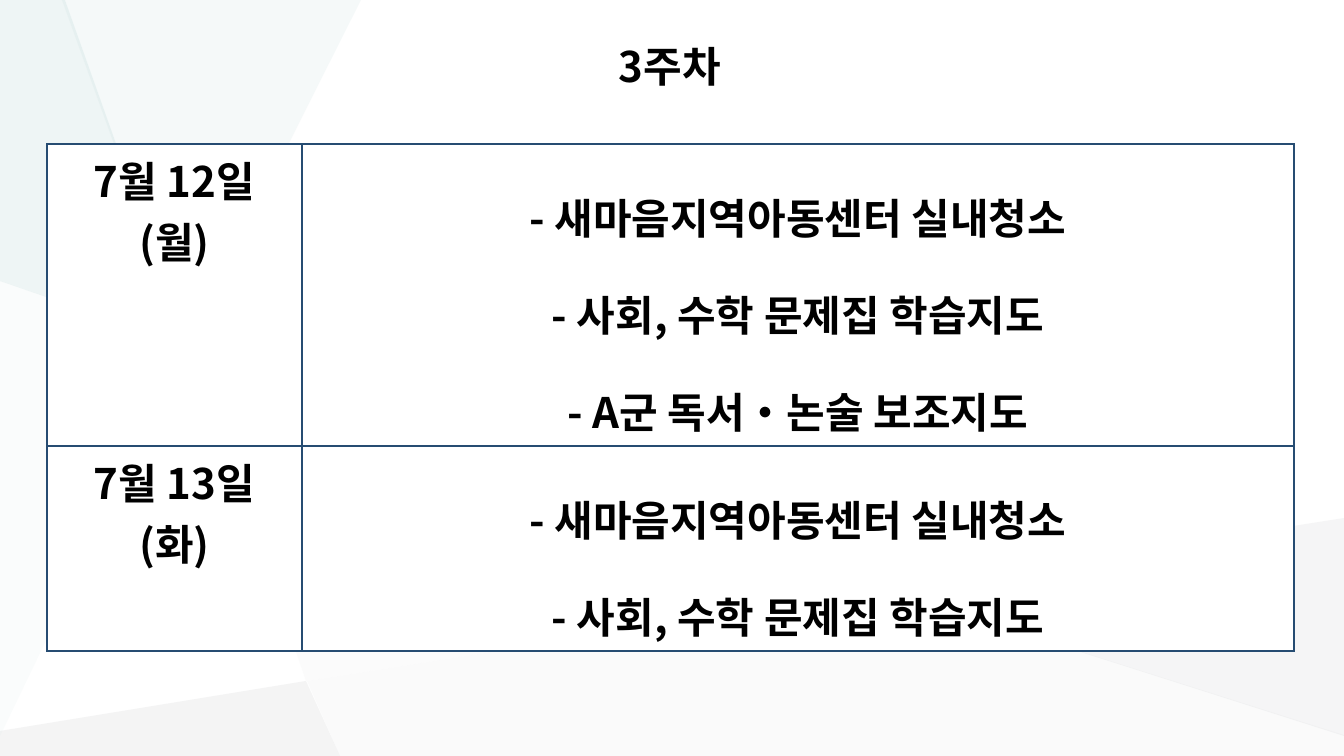
from typing import NamedTuple

from lxml import etree
from pptx import Presentation
from pptx import util as u
from pptx.dml.color import RGBColor
from pptx.enum import text
from pptx.oxml import ns

EMU_PER_PX = 914400 / 100.8
COLORS = {
    "ink": "000000", "paper": "FFFFFF", "border": "264C72",
    "pale": "F3F2F2", "gray": "B6B8BA", "silver": "C6C8CA",
    "mist": "E0EDED", "mint": "C1DBDB",
}
FONT = "Noto Sans CJK KR"
DOT, DOT_FONT = "‧", "Arial"
BODY_FORMAT = {"size": u.Pt(30), "bold": True}


class Facet(NamedTuple):
    color: str
    opacity: int  # percent
    points: list[tuple[int, int]]


class Day(NamedTuple):
    height: int
    date: list[str]
    tasks: list[str]


FACETS = [
    Facet("pale", 26, [(192, 347), (306, 681), (886, 590)]),
    Facet("gray", 15, [(306, 681), (0, 731), (0, 756), (340, 756)]),
    Facet("mist", 31, [(361, 0), (62, 0), (187, 346)]),
    Facet("silver", 17, [(1344, 518), (886, 590), (1344, 736)]),
    Facet("gray", 6, [(886, 590), (307, 681), (340, 756), (1344, 756), (1344, 735)]),
    Facet("mint", 27, [(65, 0), (0, 0), (0, 281), (188, 346)]),
    Facet("mint", 8, [(0, 281), (0, 736), (188, 346)]),
]
CLEANING = "- 새마음지역아동센터 실내청소"
STUDY = "- 사회, 수학 문제집 학습지도"
DAYS = [
    Day(302, ["7월 12일", "(월)"], [CLEANING, STUDY, "- A군 독서‧논술 보조지도"]),
    Day(205, ["7월 13일", "(화)"], [CLEANING, STUDY]),
]
COLUMN_WIDTHS = [255, 992]


def px(length: int) -> u.Emu:
    return u.Emu(round(length * EMU_PER_PX))


def rgb(name: str) -> RGBColor:
    return RGBColor.from_string(COLORS[name])


def add_run(paragraph, words: str, typeface: str) -> None:
    run = paragraph.add_run()
    run.text = words
    for name, value in BODY_FORMAT.items():
        setattr(run.font, name, value)
    run.font.color.rgb = rgb("ink")
    run.font.name = typeface
    east_asian = etree.SubElement(run.font._element, ns.qn("a:ea"))
    east_asian.set("typeface", typeface)


def write_lines(frame, lines: list[str], spacing: float = 1.0) -> None:
    for index, line in enumerate(lines):
        paragraph = frame.add_paragraph() if index else frame.paragraphs[0]
        paragraph.alignment = text.PP_ALIGN.CENTER
        paragraph.line_spacing = spacing
        before, dot, after = line.partition(DOT)
        for words, typeface in ((before, FONT), (dot, DOT_FONT), (after, FONT)):
            if words:
                add_run(paragraph, words, typeface)


def draw_facet(slide, facet: Facet) -> None:
    start, *rest = facet.points
    builder = slide.shapes.build_freeform(*start, scale=EMU_PER_PX)
    builder.add_line_segments(rest, close=True)
    shape = builder.convert_to_shape()
    shape.shadow.inherit = False
    shape.line.fill.background()
    shape.fill.solid()
    shape.fill.fore_color.rgb = rgb(facet.color)
    color = shape._element.spPr.find(".//" + ns.qn("a:srgbClr"))
    etree.SubElement(color, ns.qn("a:alpha")).set("val", str(facet.opacity * 1000))


def format_cell(cell) -> None:
    properties = cell._tc.get_or_add_tcPr()
    for side in ("lnL", "lnR", "lnT", "lnB"):
        line = etree.SubElement(properties, ns.qn(f"a:{side}"), w=str(u.Pt(1)))
        fill = etree.SubElement(line, ns.qn("a:solidFill"))
        etree.SubElement(fill, ns.qn("a:srgbClr"), val=COLORS["border"])
    cell.fill.solid()
    cell.fill.fore_color.rgb = rgb("paper")


def draw_schedule(slide) -> None:
    total_height = sum(day.height for day in DAYS)
    table = slide.shapes.add_table(
        len(DAYS), len(COLUMN_WIDTHS), px(47), px(144),
        px(sum(COLUMN_WIDTHS)), px(total_height)).table
    table.first_row = table.horz_banding = False
    for column, width in zip(table.columns, COLUMN_WIDTHS):
        column.width = px(width)
    for row, day in zip(table.rows, DAYS):
        row.height = px(day.height)
        for cell, lines, spacing in zip(row.cells, (day.date, day.tasks), (1.0, 1.6)):
            format_cell(cell)
            write_lines(cell.text_frame, lines, spacing)


def main() -> None:
    deck = Presentation()
    deck.slide_width, deck.slide_height = px(1344), px(756)
    slide = deck.slides.add_slide(deck.slide_layouts[5])

    # Background facets
    for facet in FACETS:
        draw_facet(slide, facet)

    # Title, brought in front of the facets
    title = slide.shapes.title
    slide.shapes._spTree.append(title._element)
    box = {"left": 47, "top": 14, "width": 1246, "height": 104}
    for name, length in box.items():
        setattr(title, name, px(length))
    title.text_frame.auto_size = text.MSO_AUTO_SIZE.NONE
    title.text_frame.vertical_anchor = text.MSO_ANCHOR.MIDDLE
    write_lines(title.text_frame, ["3주차"])

    # Schedule table
    draw_schedule(slide)

    deck.save("out.pptx")


if __name__ == "__main__":
    main()
